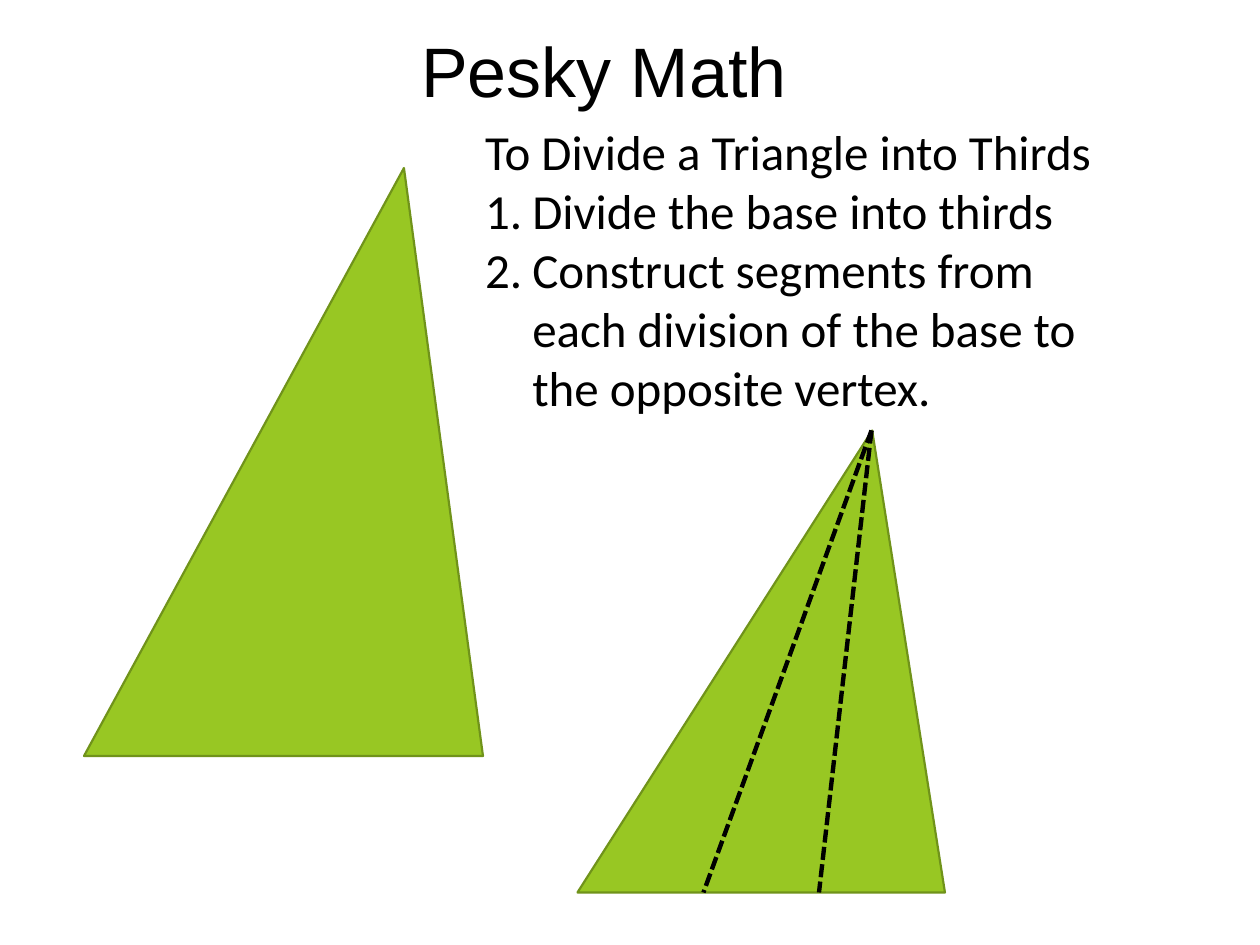
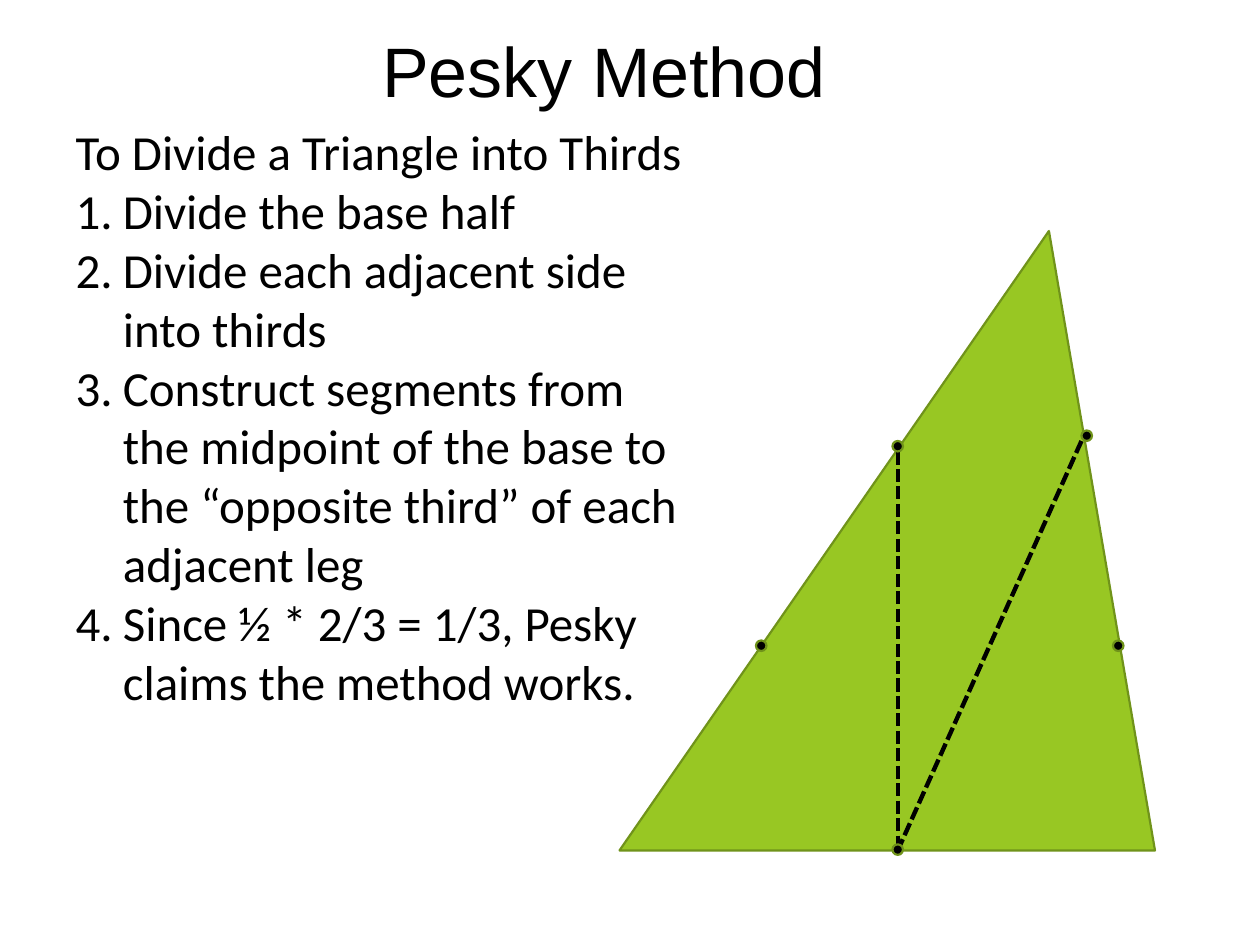
"""Build two slides on dividing a triangle into thirds."""
import pptx
import pptx.dml.color
import pptx.enum.dml
import pptx.enum.shapes
import pptx.enum.text
import pptx.oxml
import pptx.oxml.ns
import pptx.util
from lxml import etree

Pt = pptx.util.Pt
SHAPES = pptx.enum.shapes.MSO_SHAPE
ALIGN = pptx.enum.text.PP_ALIGN
BLACK = "000000"
GREEN = "98C723"
OLIVE = "70931A"
APEX = 0.802
DOT = 6
INDENT = 27
HEADING = "To Divide a Triangle into Thirds"


def color(value):
    return pptx.dml.color.RGBColor.from_string(value)


def add_text(para, text, size, font, align=ALIGN.LEFT, numbered=False):
    props = para._p.get_or_add_pPr()
    indent = Pt(INDENT) if numbered else 0
    props.set("marL", str(indent))
    props.set("indent", str(-indent))
    bullet = etree.SubElement(props, pptx.oxml.ns.qn("a:buAutoNum" if numbered else "a:buNone"))
    if numbered:
        bullet.set("type", "arabicPeriod")
    para.alignment = align
    para.space_before = Pt(0)
    span = para.add_run()
    span.text = text
    span.font.size = Pt(size)
    span.font.name = font
    span.font.color.rgb = color(BLACK)


def place(holder, left, top, width, height):
    holder.left, holder.top = Pt(left), Pt(top)
    holder.width, holder.height = Pt(width), Pt(height)
    frame = holder.text_frame
    frame.word_wrap = True
    frame.auto_size = pptx.enum.text.MSO_AUTO_SIZE.NONE
    frame.vertical_anchor = pptx.enum.text.MSO_ANCHOR.TOP
    return frame


def add_slide(deck, title, steps, left, height):
    slide = deck.slides.add_slide(deck.slide_layouts[1])
    frame = place(slide.shapes.title, 72, 12, 546, 55.5)
    add_text(frame.paragraphs[0], title, size=40, font="Arial", align=ALIGN.CENTER)
    frame = place(slide.placeholders[1], left, 66, 366, height)
    add_text(frame.paragraphs[0], HEADING, size=28, font="Calibri")
    for step in steps:
        add_text(frame.add_paragraph(), step, size=28, font="Calibri", numbered=True)
    return slide


def add_figure(slide, kind, left, top, width, height, fill):
    figure = slide.shapes.add_shape(kind, Pt(left), Pt(top), Pt(width), Pt(height))
    figure.shadow.inherit = False
    figure.fill.solid()
    figure.fill.fore_color.rgb = color(fill)
    figure.line.color.rgb = color(OLIVE)
    figure.line.width = Pt(1.25)
    return figure


def add_triangle(slide, left, top, width, height):
    triangle = add_figure(slide, SHAPES.ISOSCELES_TRIANGLE, left, top, width, height, GREEN)
    triangle.adjustments[0] = APEX


def add_dot(slide, x, y):
    add_figure(slide, SHAPES.OVAL, x - DOT / 2, y - DOT / 2, DOT, DOT, BLACK)


def add_segment(slide, start, end):
    segment = slide.shapes.add_connector(
        pptx.enum.shapes.MSO_CONNECTOR.STRAIGHT, *(Pt(length) for length in start + end))
    segment.line.color.rgb = color(BLACK)
    segment.line.width = Pt(2.5)
    segment.line.dash_style = pptx.enum.dml.MSO_LINE.SQUARE_DOT
    etree.SubElement(segment._element.spPr, pptx.oxml.ns.qn("a:effectLst"))


def build_math(deck):
    slide = add_slide(deck, "Pesky Math", [
        "Divide the base into thirds",
        "Construct segments from each division of the base to the opposite vertex.",
    ], left=270, height=177)
    add_triangle(slide, 48, 96, 228, 336)
    add_triangle(slide, 330, 246, 210, 264)
    for base_x in (402, 468):
        add_segment(slide, (498, 246), (base_x, 510))


def build_method(deck):
    slide = add_slide(deck, "Pesky Method", [
        "Divide the base half",
        "Divide each adjacent side into thirds",
        "Construct segments from the midpoint of the base to the “opposite third” of each adjacent leg",
        "Since ½ * 2/3 = 1/3, Pesky claims the method works.",
    ], left=36, height=346)
    add_triangle(slide, 354, 132, 306, 354)
    midpoint = (513, 486)
    for upper_third in ((513, 258), (618, 252)):
        add_segment(slide, upper_third, midpoint)
    for x, y in ((513, 255), (435, 369), (621, 249), (639, 369), (513, 485.5)):
        add_dot(slide, x, y)


def main():
    deck = pptx.Presentation()
    deck.slide_width, deck.slide_height = Pt(720), Pt(540)
    build_math(deck)
    build_method(deck)
    deck.save("out.pptx")


if __name__ == "__main__":
    main()
